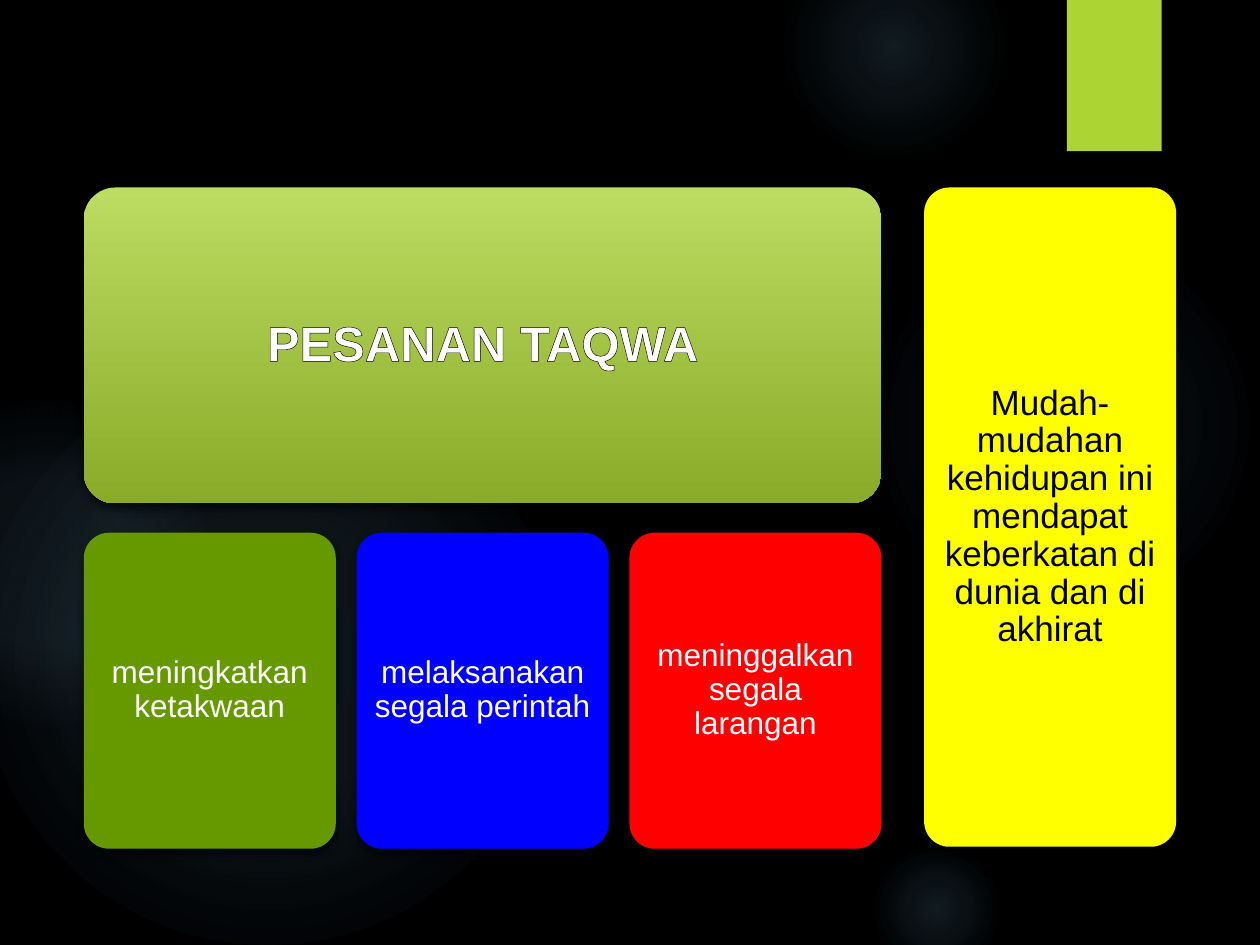
import pptx
import pptx.dml.color
import pptx.enum.shapes
import pptx.enum.text
import pptx.oxml
import pptx.oxml.ns
import pptx.util
from pptx.util import Cm

SHAPES = pptx.enum.shapes.MSO_SHAPE
FONT = "Arial"
TITLE = "PESANAN TAQWA"
MESSAGES = [
    ("meningkatkan ketakwaan", "669900"),
    ("melaksanakan segala perintah", "0000FF"),
    ("meninggalkan segala larangan", "FF0000"),
]
HOPE = "Mudah-mudahan kehidupan ini mendapat keberkatan di dunia dan di akhirat"
GLOW_COLOR = "7AC4F0"
GLOWS = [
    (17.5, 4.65, 7.82, [(0, 7), (36, 6), (69, 0)]),
    (15.8, -1.27, 4.45, [(0, 14), (36, 7), (73, 0)]),
    (17.5, 16.94, 2.74, [(0, 14), (36, 7), (66, 0)]),
    (-0.43, 7.42, 11.63, [(0, 11), (36, 10), (75, 0)]),
    (-2.34, 8.05, 6.55, [(0, 8), (36, 8), (72, 0)]),
]
LEFT, TOP = 1.69, 3.78
CARD_WIDTH, CARD_HEIGHT, CARD_GAP = 5.08, 6.37, 0.42
CARD_TOP = 10.74
HOPE_LEFT, HOPE_HEIGHT = 18.63, 13.29
HEADER_WIDTH = len(MESSAGES) * (CARD_WIDTH + CARD_GAP) - CARD_GAP


def rgb(value):
    return pptx.dml.color.RGBColor.from_string(value)


def xml(tag, content):
    namespace = pptx.oxml.ns.nsdecls("a")
    return pptx.oxml.parse_xml(f"<a:{tag} {namespace}>{content}</a:{tag}>")


def color_xml(color, alpha=100):
    return f'<a:srgbClr val="{color}"><a:alpha val="{alpha * 1000}"/></a:srgbClr>'


def add_block(slide, kind, left, top, width, height, color=None):
    shape = slide.shapes.add_shape(kind, Cm(left), Cm(top), Cm(width), Cm(height))
    shape.shadow.inherit = False
    shape.line.fill.background()
    if color:
        shape.fill.solid()
        shape.fill.fore_color.rgb = rgb(color)
    return shape


def set_gradient(shape, stops, direction):
    shape.fill.background()
    stop_xml = "".join(
        f'<a:gs pos="{position * 1000}">{color_xml(color, alpha)}</a:gs>'
        for position, color, alpha in stops
    )
    properties = shape._element.spPr
    empty_fill = properties.find(pptx.oxml.ns.qn("a:noFill"))
    properties.replace(empty_fill, xml("gradFill", f"<a:gsLst>{stop_xml}</a:gsLst>{direction}"))


def add_shadow(shape, blur, distance, alpha):
    effects = shape._element.spPr.find(pptx.oxml.ns.qn("a:effectLst"))
    shadow = xml("outerShdw", color_xml("000000", alpha))
    shadow.set("blurRad", str(pptx.util.Pt(blur)))
    shadow.set("dist", str(pptx.util.Pt(distance)))
    shadow.set("dir", "5400000")
    shadow.set("rotWithShape", "0")
    effects.append(shadow)


def add_card(slide, left, top, width, height, color=None):
    card = add_block(slide, SHAPES.ROUNDED_RECTANGLE, left, top, width, height, color)
    card.adjustments[0] = 0.1
    add_shadow(card, 5, 3, 60)
    return card


def write(shape, text, size, color, inset, bold=False):
    frame = shape.text_frame
    frame.word_wrap = True
    frame.auto_size = pptx.enum.text.MSO_AUTO_SIZE.NONE
    frame.vertical_anchor = pptx.enum.text.MSO_ANCHOR.MIDDLE
    frame.margin_left = frame.margin_right = Cm(inset)
    frame.margin_top = frame.margin_bottom = Cm(inset)
    paragraph = frame.paragraphs[0]
    paragraph.alignment = pptx.enum.text.PP_ALIGN.CENTER
    paragraph.line_spacing = 0.9
    run = paragraph.add_run()
    run.text = text
    run.font.name = FONT
    run.font.size = pptx.util.Pt(size)
    run.font.bold = bold
    run.font.color.rgb = rgb(color)
    return run


def add_background(slide):
    slide.background.fill.solid()
    slide.background.fill.fore_color.rgb = rgb("000000")
    radial = (
        '<a:path path="circle">'
        '<a:fillToRect l="50000" t="50000" r="50000" b="50000"/></a:path>'
    )
    for left, top, size, stops in GLOWS:
        glow = add_block(slide, SHAPES.OVAL, left, top, size, size)
        set_gradient(glow, [(position, GLOW_COLOR, alpha) for position, alpha in stops], radial)
    tab = add_block(slide, SHAPES.RECTANGLE, 21.51, 0, 1.91, 3.05, "ACD433")
    add_shadow(tab, 3, 2, 45)


def add_header(slide):
    panel = add_card(slide, LEFT, TOP, HEADER_WIDTH, CARD_HEIGHT)
    set_gradient(panel, [(0, "BCDC62", 100), (100, "8AAA29", 100)], '<a:lin ang="5400000" scaled="0"/>')
    title = slide.shapes.title
    title.left, title.top = panel.left, panel.top
    title.width, title.height = panel.width, panel.height
    run = write(title, TITLE, 28, "FFFFFF", 0.5, bold=True)
    outline = xml("ln", f"<a:solidFill>{color_xml('000000')}</a:solidFill>")
    outline.set("w", str(pptx.util.Pt(0.75)))
    run.font._element.insert(0, outline)
    slide.shapes._spTree.append(title._element)


def main():
    presentation = pptx.Presentation()
    presentation.slide_width, presentation.slide_height = Cm(25.4), Cm(19.05)
    slide = presentation.slides.add_slide(presentation.slide_layouts[5])
    add_background(slide)
    add_header(slide)
    for index, (text, color) in enumerate(MESSAGES):
        left = LEFT + index * (CARD_WIDTH + CARD_GAP)
        card = add_card(slide, left, CARD_TOP, CARD_WIDTH, CARD_HEIGHT, color)
        write(card, text, 18, "FFFFFF", 0.18)
    hope = add_card(slide, HOPE_LEFT, TOP, CARD_WIDTH, HOPE_HEIGHT, "FFFF00")
    write(hope, HOPE, 20, "000000", 0.2)
    presentation.save("out.pptx")


if __name__ == "__main__":
    main()
